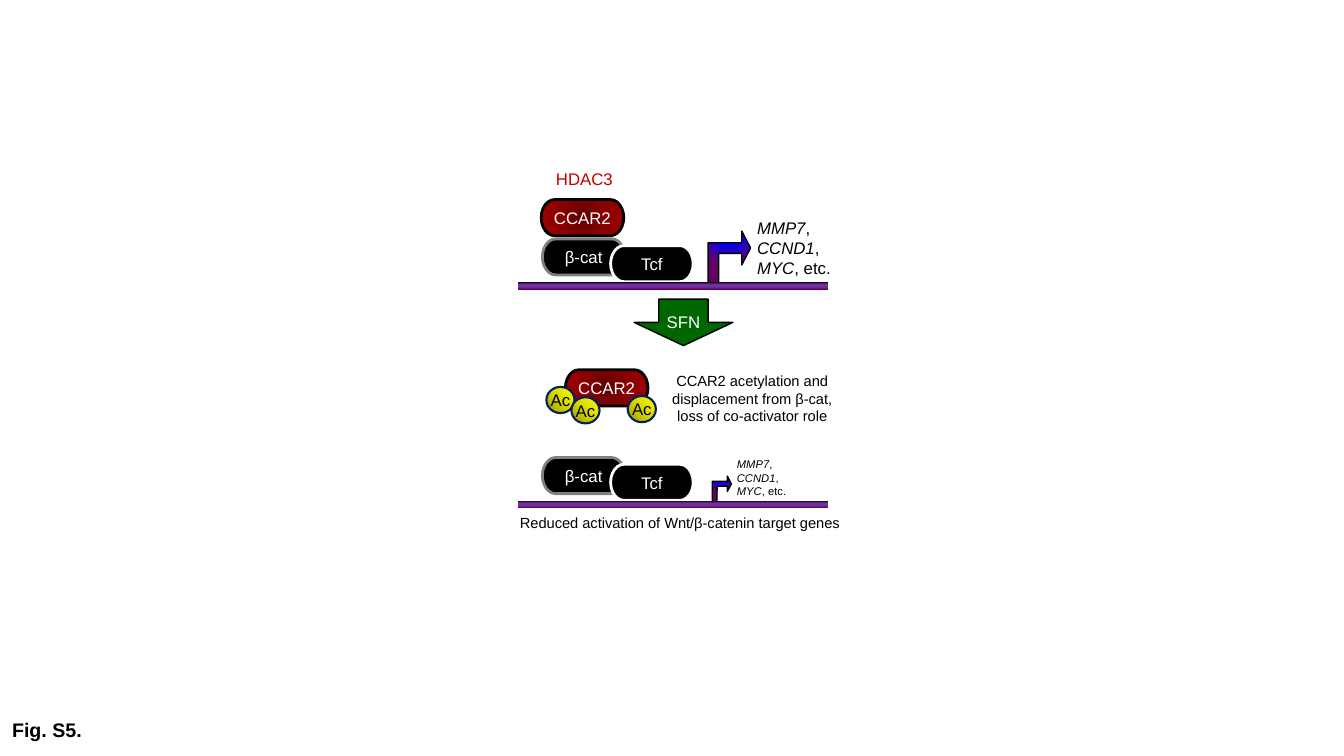
from pptx import Presentation
from pptx.dml.color import RGBColor
from pptx.enum.shapes import MSO_SHAPE
from pptx.enum.text import MSO_ANCHOR, MSO_AUTO_SIZE, PP_ALIGN
from pptx.oxml import parse_xml
from pptx.oxml.ns import nsdecls
from pptx.util import Cm, Pt

PILL = MSO_SHAPE.FLOWCHART_TERMINATOR
BENT_ARROW = MSO_SHAPE.BENT_UP_ARROW
DOWN_ARROW = MSO_SHAPE.DOWN_ARROW
OVAL = MSO_SHAPE.OVAL
BAR = MSO_SHAPE.RECTANGLE
LEFT, CENTER = PP_ALIGN.LEFT, PP_ALIGN.CENTER
TOP, MIDDLE = MSO_ANCHOR.TOP, MSO_ANCHOR.MIDDLE
NO_AUTOFIT = MSO_AUTO_SIZE.NONE

FONT = "Arial"
BLACK, WHITE, GREY = "000000", "FFFFFF", "808080"
PILL_SIZE = (2.08, 0.91)
ACETYL_SIZE = (0.71, 0.66)

# Gradients: (stops, linear angle in degrees or None, centre rectangle for circular ones)
RED_GLOW = ([(0, "600000"), (50, "890000"), (100, "A20000")], None, (50, 50, 50, 50))
ARROW_GLOW = ([(0, "FFFFFF"), (35, "0000FF"), (100, "660066")], None, (50, -80, 50, 180))
DNA_PURPLE = ([(0, "000000"), (32, "7030A0"), (68, "7030A0"), (100, "660066")], 90, None)
ACETYL_YELLOW = ([(0, "979700"), (50, "D7D700"), (100, "FFFF00")], 315, None)

GENE_LINES = [[("MMP7", True), (", ", False), ("CCND1", True), (",", False)],
              [("MYC", True), (", etc.", False)]]


def color(value):
    return RGBColor.from_string(value)


def fill_gradient(shape, gradient):
    stops, angle, center = gradient
    stop_xml = "".join(
        f'<a:gs pos="{position * 1000}"><a:srgbClr val="{value}"/></a:gs>'
        for position, value in stops)
    if center is None:
        direction = f'<a:lin ang="{angle * 60000}" scaled="0"/>'
    else:
        sides = " ".join(f'{side}="{percent * 1000}"' for side, percent in zip("ltrb", center))
        direction = f'<a:path path="circle"><a:fillToRect {sides}/></a:path>'
    element = parse_xml(f'<a:gradFill {nsdecls("a")} rotWithShape="1">'
                        f'<a:gsLst>{stop_xml}</a:gsLst>{direction}</a:gradFill>')
    properties = shape._element.spPr
    properties.insert(2, element)  # right after position and geometry


def format_font(paragraph, size, text_color, align):
    paragraph.alignment = align
    paragraph.font.name = FONT
    paragraph.font.size = Pt(size)
    paragraph.font.color.rgb = color(text_color)


def prepare_frame(frame, wrap, anchor):
    frame.margin_left = frame.margin_right = frame.margin_top = frame.margin_bottom = 0
    frame.word_wrap = wrap
    frame.vertical_anchor = anchor


def add_figure(shapes, kind, left, top, size, fill, line=None, line_width=2,
               label="", label_color=WHITE):
    """Add a preset shape with a plain or gradient fill and a centred label."""
    shape = shapes.add_shape(kind, Cm(left), Cm(top), *map(Cm, size))
    shape.shadow.inherit = False
    if isinstance(fill, str):
        shape.fill.solid()
        shape.fill.fore_color.rgb = color(fill)
    else:
        fill_gradient(shape, fill)
    if line:
        shape.line.color.rgb = color(line)
        shape.line.width = Pt(line_width)
    else:
        shape.line.fill.background()
    if label:
        prepare_frame(shape.text_frame, False, MIDDLE)
        paragraph = shape.text_frame.paragraphs[0]
        paragraph.text = label
        format_font(paragraph, 12, label_color, CENTER)
    return shape


def add_text(slide, left, top, width, height, text, size):
    box = slide.shapes.add_textbox(Cm(left), Cm(top), Cm(width), Cm(height))
    prepare_frame(box.text_frame, True, TOP)
    paragraph = box.text_frame.paragraphs[0]
    paragraph.text = text
    format_font(paragraph, size, BLACK, CENTER)


def add_genes(slide, left, top, width, height, size):
    box = slide.shapes.add_textbox(Cm(left), Cm(top), Cm(width), Cm(height))
    frame = box.text_frame
    prepare_frame(frame, True, TOP)
    for index, parts in enumerate(GENE_LINES):
        paragraph = frame.add_paragraph() if index else frame.paragraphs[0]
        format_font(paragraph, size, BLACK, LEFT)
        for text, italic in parts:
            run = paragraph.add_run()
            run.text = text
            run.font.italic = italic


def add_transcription_arrow(slide, left, top, size):
    arrow = add_figure(slide.shapes, BENT_ARROW, left, top, size, ARROW_GLOW, BLACK, 1)
    for index, value in enumerate((0.25, 0.399, 0.209)):
        arrow.adjustments[index] = value
    arrow.rotation = 270
    arrow._element.spPr.xfrm.set("flipV", "1")


def add_promoter(slide, top):
    """Add β-cat and Tcf sitting on the DNA bar."""
    add_figure(slide.shapes, PILL, 13.67, top, PILL_SIZE, BLACK, GREY, label="β-cat")
    add_figure(slide.shapes, PILL, 15.39, top + 0.17, PILL_SIZE, BLACK, WHITE, label="Tcf")
    add_figure(slide.shapes, BAR, 13.06, top + 1.09, (7.82, 0.18), DNA_PURPLE)


def add_ccar2(shapes, left, top):
    add_figure(shapes, PILL, left, top, PILL_SIZE, RED_GLOW, BLACK, label="CCAR2")


def add_acetylated_ccar2(slide):
    group = slide.shapes.add_group_shape()
    add_ccar2(group.shapes, 14.25, 9.32)
    for left, top in ((13.77, 9.75), (14.4, 10.01), (15.82, 9.98)):
        add_figure(group.shapes, OVAL, left, top, ACETYL_SIZE, ACETYL_YELLOW,
                   "002060", 1.5, "Ac", BLACK)


def set_figure_title(slide, text):
    title = slide.shapes.title
    title.left, title.top, title.width, title.height = Cm(0.05), Cm(17.96), Cm(6.32), Cm(0.86)
    frame = title.text_frame
    frame.text = text
    frame.auto_size = NO_AUTOFIT
    frame.vertical_anchor = MIDDLE
    format_font(frame.paragraphs[0], 14, BLACK, LEFT)
    frame.paragraphs[0].font.bold = True


def main():
    presentation = Presentation()
    presentation.slide_width, presentation.slide_height = Cm(33.87), Cm(19.05)
    slide = presentation.slides.add_slide(presentation.slide_layouts[5])
    set_figure_title(slide, "Fig. S5.")

    add_transcription_arrow(slide, 17.68, 5.99, (1.4, 1.07))
    add_figure(slide.shapes, PILL, 13.69, 4.04, PILL_SIZE, WHITE, WHITE,
               label="HDAC3", label_color="C00000")
    add_ccar2(slide.shapes, 13.64, 5.03)
    add_promoter(slide, 6.02)
    add_genes(slide, 19.08, 5.49, 2.06, 1.55, 12)

    treatment = add_figure(slide.shapes, DOWN_ARROW, 15.98, 7.54, (2.49, 1.17),
                           "006600", BLACK, 1, "SFN")
    treatment.text_frame.margin_top = Cm(0.25)
    add_acetylated_ccar2(slide)
    add_text(slide, 16.66, 9.37, 4.6, 1.35,
             "CCAR2 acetylation and displacement from β-cat, loss of co-activator role", 10.5)

    add_transcription_arrow(slide, 17.86, 12.09, (0.66, 0.48))
    add_promoter(slide, 11.53)
    add_genes(slide, 18.57, 11.53, 1.37, 1.02, 8)
    add_text(slide, 13, 12.95, 8.28, 0.46,
             "Reduced activation of Wnt/β-catenin target genes", 10.5)

    presentation.save("out.pptx")


if __name__ == "__main__":
    main()
